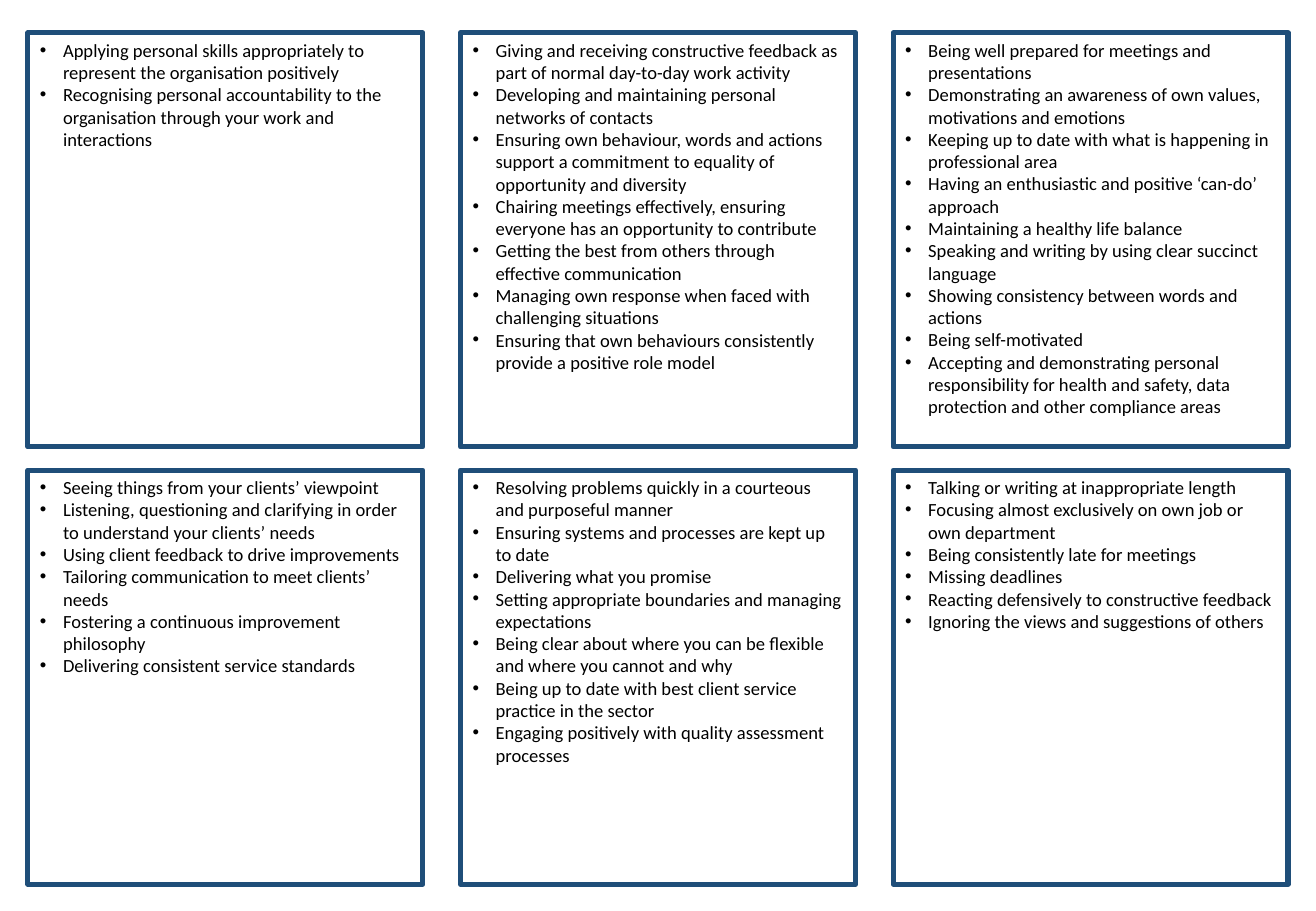
from dataclasses import dataclass

from lxml.etree import SubElement
from pptx import Presentation
from pptx.dml.color import RGBColor
from pptx.enum.shapes import MSO_SHAPE
from pptx.enum.text import MSO_ANCHOR, MSO_AUTO_SIZE, PP_ALIGN
from pptx.oxml.ns import qn
from pptx.util import Inches, Pt


@dataclass(frozen=True)
class Theme:
    border: RGBColor = RGBColor(0x1F, 0x4E, 0x79)
    ink: RGBColor = RGBColor(0, 0, 0)
    font: str = "Calibri"
    text_size: float = 11
    border_width: float = 3
    bullet_indent: float = 0.19
    line_height: float = 0.185
    text_padding: float = 0.1


@dataclass(frozen=True)
class Grid:
    left: float = 0.23
    top: float = 0.27
    column_step: float = 3.56
    row_step: float = 3.6
    card_width: float = 3.25
    card_height: float = 3.41
    columns: int = 3

    def corner(self, index):
        row, column = divmod(index, self.columns)
        return (Inches(self.left + column * self.column_step),
                Inches(self.top + row * self.row_step))


THEME = Theme()
GRID = Grid()

# Each card, row by row: lines of text it takes up, then its bullets
CARDS = [
    (5, [
        "Applying personal skills appropriately to represent the organisation positively",
        "Recognising personal accountability to the organisation through your work and interactions",
    ]),
    (15, [
        "Giving and receiving constructive feedback as part of normal day-to-day work activity",
        "Developing and maintaining personal networks of contacts",
        "Ensuring own behaviour, words and actions support a commitment to equality of opportunity and diversity",
        "Chairing meetings effectively, ensuring everyone has an opportunity to contribute",
        "Getting the best from others through effective communication",
        "Managing own response when faced with challenging situations",
        "Ensuring that own behaviours consistently provide a positive role model",
    ]),
    (18, [
        "Being well prepared for meetings and presentations",
        "Demonstrating an awareness of own values, motivations and emotions",
        "Keeping up to date with what is happening in professional area",
        "Having an enthusiastic and positive ‘can-do’ approach",
        "Maintaining a healthy life balance",
        "Speaking and writing by using clear succinct language",
        "Showing consistency between words and actions",
        "Being self-motivated",
        "Accepting and demonstrating personal responsibility for health and safety, data protection and other compliance areas",
    ]),
    (9, [
        "Seeing things from your clients’ viewpoint",
        "Listening, questioning and clarifying in order to understand your clients’ needs",
        "Using client feedback to drive improvements",
        "Tailoring communication to meet clients’ needs",
        "Fostering a continuous improvement philosophy",
        "Delivering consistent service standards",
    ]),
    (13, [
        "Resolving problems quickly in a courteous and purposeful manner",
        "Ensuring systems and processes are kept up to date",
        "Delivering what you promise",
        "Setting appropriate boundaries and managing expectations",
        "Being clear about where you can be flexible and where you cannot and why",
        "Being up to date with best client service practice in the sector",
        "Engaging positively with quality assessment processes",
    ]),
    (7, [
        "Talking or writing at inappropriate length",
        "Focusing almost exclusively on own job or own department",
        "Being consistently late for meetings",
        "Missing deadlines",
        "Reacting defensively to constructive feedback",
        "Ignoring the views and suggestions of others",
    ]),
]


def add_frame(page, index):
    frame = page.shapes.add_shape(
        MSO_SHAPE.RECTANGLE, *GRID.corner(index),
        Inches(GRID.card_width), Inches(GRID.card_height))
    frame.shadow.inherit = False
    frame.fill.background()
    frame.line.color.rgb = THEME.border
    frame.line.width = Pt(THEME.border_width)


def set_bullet(para):
    properties = para._p.get_or_add_pPr()
    indent = Inches(THEME.bullet_indent)
    properties.set("marL", str(indent))
    properties.set("indent", str(-indent))
    SubElement(properties, qn("a:buFont")).set("typeface", "Arial")
    SubElement(properties, qn("a:buChar")).set("char", "•")


def add_bullets(page, index, line_count, bullets):
    height = THEME.text_padding + line_count * THEME.line_height
    box = page.shapes.add_textbox(
        *GRID.corner(index), Inches(GRID.card_width), Inches(height))
    text = box.text_frame
    text.word_wrap = True
    text.auto_size = MSO_AUTO_SIZE.SHAPE_TO_FIT_TEXT
    text.vertical_anchor = MSO_ANCHOR.TOP
    for number, bullet in enumerate(bullets):
        para = text.add_paragraph() if number else text.paragraphs[0]
        para.alignment = PP_ALIGN.LEFT
        set_bullet(para)
        span = para.add_run()
        span.text = bullet
        span.font.name = THEME.font
        span.font.size = Pt(THEME.text_size)
        span.font.color.rgb = THEME.ink


def main():
    deck = Presentation()
    deck.slide_width, deck.slide_height = Inches(10.83), Inches(7.5)
    page = deck.slides.add_slide(deck.slide_layouts.get_by_name("Blank"))

    # Frames lie behind all the text
    for index in range(len(CARDS)):
        add_frame(page, index)

    # Bullet lists
    for index, (line_count, bullets) in enumerate(CARDS):
        add_bullets(page, index, line_count, bullets)

    deck.save("out.pptx")


if __name__ == "__main__":
    main()
